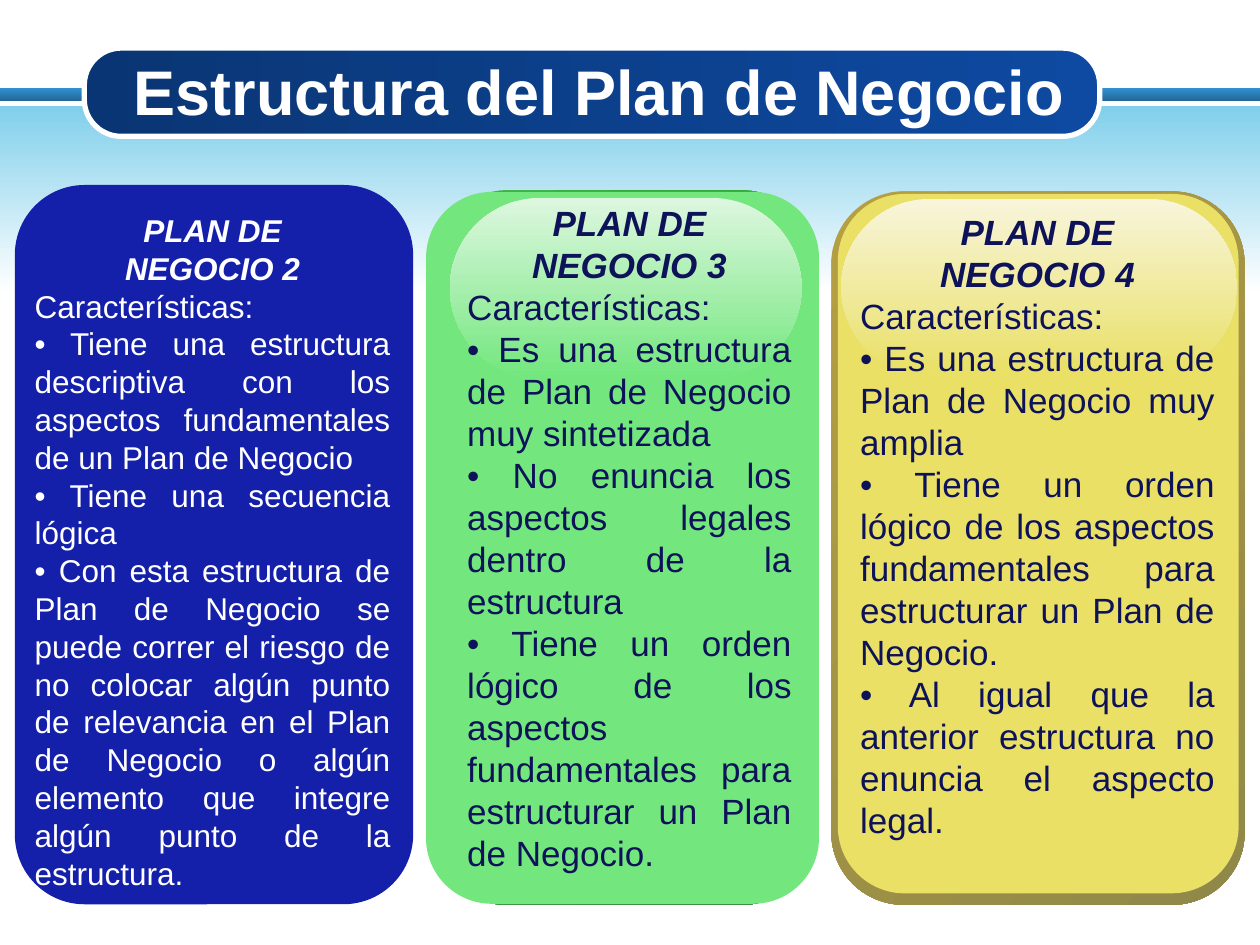
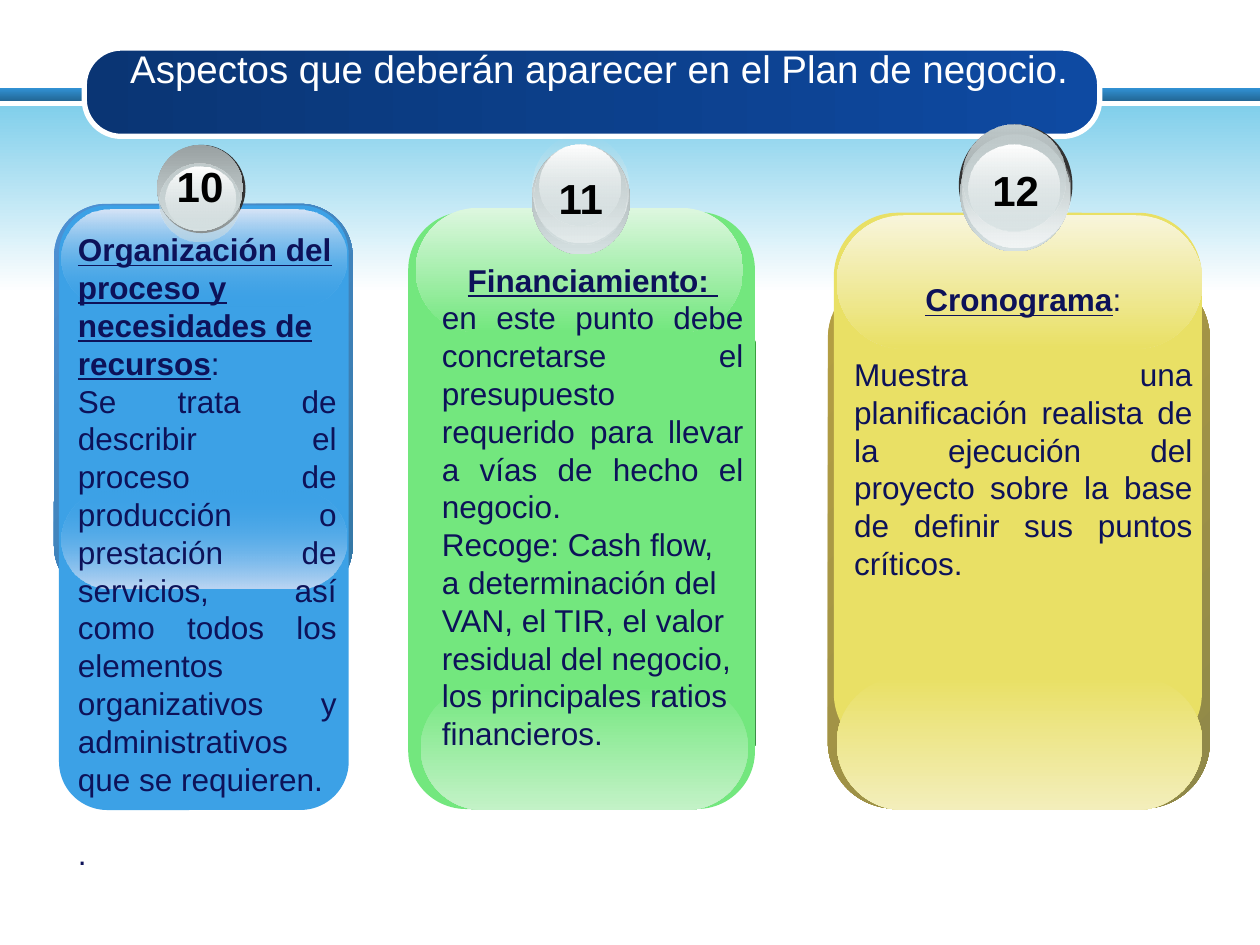
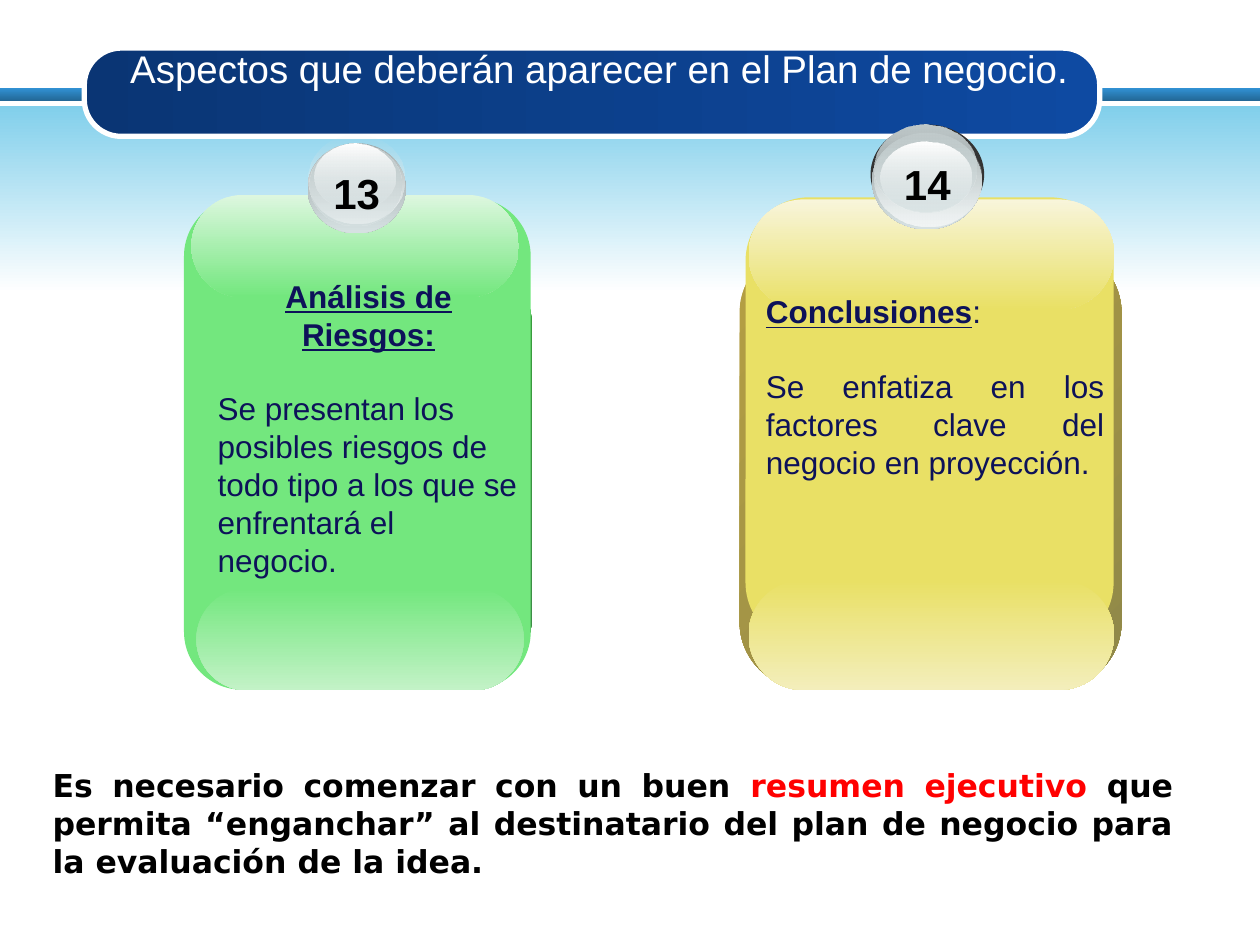
from dataclasses import dataclass

from lxml import etree
from pptx import Presentation
from pptx.dml.color import RGBColor
from pptx.enum.shapes import MSO_SHAPE
from pptx.enum.text import MSO_ANCHOR, PP_ALIGN
from pptx.oxml.ns import qn
from pptx.util import Cm, Pt

RECT, ROUND = MSO_SHAPE.RECTANGLE, MSO_SHAPE.ROUNDED_RECTANGLE
OVAL = MSO_SHAPE.OVAL
LEFT, MID, JUST = PP_ALIGN.LEFT, PP_ALIGN.CENTER, PP_ALIGN.JUSTIFY

COLORS = {
    "white": "FFFFFF", "black": "000000", "navy": "0D1259", "red": "FF0000",
    "royal": "1420AA", "coal": "333333", "band": "3191D3", "band2": "236897",
    "sky": "81CFEB", "title": "0A3574", "title2": "0E4AA2",
    "blue": "3CA1E6", "blue_a": "4E91D4", "blue_b": "3477A4",
    "blue_hi": "D7E5F7", "blue_lo": "BDD6F3",
    "green": "73E77E", "green_a": "34B034", "green_b": "3F8B4A",
    "green_hi": "DDF7DF", "green_lo": "C3F2C7",
    "gold": "E9E065", "gold_a": "B59F43", "gold_b": "8F8849",
    "gold_hi": "F8F5DB", "gold_lo": "F3EEBB",
    "steel": "99A1A2", "silver": "D6E1E2", "mist": "C1CBCC", "pale": "F2F5F5",
}

BLENDS = {
    "bar": ("band", "band2", 90, 100, 100),
    "glow": ("sky", "white", 90, 100, 100),
    "pill": ("title", "title2", 0, 100, 100),
    "blue_top": ("blue_hi", "blue", 90, 100, 0),
    "blue_end": ("blue", "blue_lo", 90, 0, 100),
    "ball": ("steel", "silver", 90, 100, 100),
    "fade": ("silver", "pale", 90, 0, 100),
    "haze": ("mist", "silver", 90, 100, 48),
    "shine": ("white", "silver", 90, 100, 38),
}
for hue in ("blue", "green", "gold"):
    BLENDS[hue + "_back"] = (hue + "_a", hue + "_b", 45, 100, 100)
for hue in ("green", "gold"):
    BLENDS[hue + "_top"] = (hue + "_hi", hue, 90, 100, 100)
    BLENDS[hue + "_end"] = (hue, hue + "_lo", 90, 100, 100)

PANELS = {
    "royal": [("royal", 0.175, 0, 0, 8.03, 14.5),
              ("royal", 0.167, 0.13, 0.03, 7.8, 14.22),
              ("royal", 0.5, 0.18, 0.15, 7.7, 3.61)],
    "green": [("green_back", 0.175, 0.3, 0, 7.39, 14.4),
              ("green", 0.167, 0, 0.03, 7.92, 14.35),
              ("green_top", 0.5, 0.48, 0.15, 7.09, 3.63)],
    "gold": [("gold_back", 0.175, 0, 0, 8.33, 14.38),
             ("gold", 0.167, 0.13, 0.05, 8.08, 14.1),
             ("gold_top", 0.5, 0.2, 0.15, 7.98, 3.56)],
}

CARDS = {
    "blue": (13.41, (2.21, 0.2, 1.47, 1.3), [
        ("blue_back", 0.175, 0, 1.19, 6.02, 7.95),
        ("blue", 0.167, 0.1, 1.22, 5.84, 12.19),
        ("blue_end", 0.5, 0.15, 6.96, 5.74, 1.98),
        ("blue_top", 0.5, 0.15, 1.3, 5.74, 1.96),
        ("coal", None, 2.08, 0, 1.78, 1.78),
        ("ball", None, 2.08, 0, 1.73, 1.73),
        ("haze", None, 2.13, 0.38, 1.6, 1.57),
        ("shine", None, 2.24, 0.43, 1.42, 1.27)]),
    "green": (13.61, (2.77, 0.64, 1.42, 1.27), [
        ("green_back", 0.175, 0.1, 3.15, 6.91, 10.16),
        ("green", 0.167, 0, 1.55, 6.99, 12.04),
        ("green_end", 0.5, 0.25, 11.1, 6.6, 2.51),
        ("green_top", 0.5, 0.15, 1.47, 6.6, 2.51),
        ("ball", None, 2.49, 0.2, 1.98, 2.21),
        ("fade", None, 2.51, 0, 1.93, 2.16),
        ("haze", None, 2.54, 0.2, 1.85, 2.01),
        ("shine", None, 2.64, 0.2, 1.63, 1.63)]),
    "gold": (13.82, (3.05, 0.69, 1.47, 1.27), [
        ("gold_back", 0.175, 0, 2.97, 7.7, 10.82),
        ("gold", 0.173, 0.12, 1.78, 7.42, 10.97),
        ("gold_end", 0.5, 0.18, 11.13, 7.37, 2.69),
        ("gold_top", 0.5, 0.18, 1.83, 7.37, 2.69),
        ("coal", None, 2.64, 0, 2.29, 2.44),
        ("ball", None, 2.67, 0.2, 2.21, 2.36),
        ("fade", None, 2.72, 0.2, 2.16, 2.29),
        ("haze", None, 2.72, 0, 2.06, 2.13),
        ("shine", None, 2.84, 0.41, 1.83, 1.75)]),
}


@dataclass
class Para:
    text: object
    align: object = LEFT
    bold: bool = False
    slant: bool = False
    gap: float = 0


def rgb(name):
    return RGBColor.from_string(COLORS[name])


def paint(shape, name):
    if name not in BLENDS:
        shape.fill.solid()
        shape.fill.fore_color.rgb = rgb(name)
        return
    start, end, angle, *alphas = BLENDS[name]
    shape.fill.gradient()
    shape.fill.gradient_angle = (360 - angle) % 360
    for stop, color in zip(shape.fill.gradient_stops, (start, end)):
        stop.color.rgb = rgb(color)
    nodes = list(shape.element.spPr.iter(qn("a:srgbClr")))
    for node, alpha in zip(nodes, alphas):
        if alpha < 100:
            etree.SubElement(node, qn("a:alpha")).set("val", str(alpha * 1000))


def form(slide, kind, box, fill, adj=None):
    shape = slide.shapes.add_shape(kind, *map(Cm, box))
    shape.shadow.inherit = False
    if adj is not None:
        shape.adjustments[0] = adj
    paint(shape, fill)
    shape.line.fill.background()
    return shape


def write(slide, box, paras, size, color="navy", face="Arial"):
    frame = slide.shapes.add_textbox(*map(Cm, box)).text_frame
    frame.word_wrap = True
    for i, para in enumerate(paras):
        line = frame.paragraphs[0] if i == 0 else frame.add_paragraph()
        line.alignment = para.align
        if para.gap:
            line.space_before = Pt(para.gap)
        font = line.font
        font.name, font.size, font.color.rgb = face, Pt(size), rgb(color)
        font.bold, font.italic = para.bold, para.slant
        parts = para.text if isinstance(para.text, list) else [(para.text, "")]
        for text, role in parts:
            run = line.add_run()
            run.text = text
            if role == "head":
                run.font.bold = run.font.underline = True
            elif role == "hot":
                run.font.color.rgb = rgb("red")
    return frame


def stack(slide, left, top, parts, scale=1):
    for fill, adj, x, y, w, h in parts:
        kind = OVAL if adj is None else ROUND
        form(slide, kind, (left + x, top + y * scale, w, h * scale), fill, adj)


def base(deck, title, size, bold=False, lift=0):
    slide = deck.slides.add_slide(deck.slide_layouts[6])
    form(slide, RECT, (0, 1.78, 25.4, 0.25), "bar")
    form(slide, RECT, (0, 2.13, 25.4, 3.78), "glow")
    pill = form(slide, ROUND, (1.7, 0.97, 20.47, 1.78), "pill", 0.419)
    pill.line.color.rgb = rgb("white")
    pill.line.width = Pt(3)
    frame = write(slide, (2.34, 1.04, 19.48, 1.57),
                  [Para(title, MID, bold)], size, "white")
    frame.vertical_anchor = MSO_ANCHOR.MIDDLE
    if lift:
        frame.margin_top, frame.margin_bottom = 0, Cm(lift)
    return slide


def panel(slide, left, top, look, area, heads, items, size, color="navy"):
    stack(slide, left, top, PANELS[look])
    x, y, w, h = area
    paras = [Para(text, MID, True, True) for text in heads]
    paras.append(Para("Características:", JUST))
    paras += [Para("• " + text, JUST) for text in items]
    write(slide, (left + x, top + y, w, h), paras, size, color)


def card(slide, box, look, num, area, paras):
    left, top, height = box
    full, spot, parts = CARDS[look]
    scale = height / full
    stack(slide, left, top, parts, scale)
    x, y, w, h = spot
    frame = write(slide, (left + x, top + y * scale, w, h * scale),
                  [Para(num, MID, True)], 24, "black")
    frame.margin_left = frame.margin_right = 0
    x, y, w, h = area
    write(slide, (left + x, top + y, w, h), paras, 18)


def plans(deck):
    slide = base(deck, "Estructura del Plan de Negocio", 36, True)
    panel(slide, 0.3, 3.73, "royal", (0.15, 0.4, 7.67, 14.1),
          ["PLAN DE", "NEGOCIO 2"],
          ["Tiene una estructura descriptiva con los aspectos fundamentales "
           "de un Plan de Negocio",
           "Tiene una secuencia lógica",
           "Con esta estructura de Plan de Negocio se puede correr el riesgo "
           "de no colocar algún punto de relevancia en el Plan de Negocio o "
           "algún elemento que integre algún punto de la estructura."],
          18, "white")
    panel(slide, 8.59, 3.84, "green", (0.58, 0.1, 7.04, 14.25),
          ["PLAN DE NEGOCIO 3"],
          ["Es una estructura de Plan de Negocio muy sintetizada",
           "No enuncia los aspectos legales dentro de la estructura",
           "Tiene un orden lógico de los aspectos fundamentales para "
           "estructurar un Plan de Negocio."], 20)
    panel(slide, 16.76, 3.86, "gold", (0.33, 0.25, 7.65, 13.08),
          ["PLAN DE", "NEGOCIO 4"],
          ["Es una estructura de Plan de Negocio muy amplia",
           "Tiene un orden lógico de los aspectos fundamentales para "
           "estructurar un Plan de Negocio.",
           "Al igual que la anterior estructura no enuncia el aspecto legal."],
          20)


def topics(deck):
    return base(deck, "Aspectos que deberán aparecer en el Plan de negocio.",
                22, lift=0.89)


def means(deck):
    slide = topics(deck)
    card(slide, (1.09, 2.92, 13.41), "blue", "10", (0.23, 1.6, 5.72, 13.34), [
        Para([("Organización del proceso y necesidades de recursos", "head"),
              (":", "")]),
        Para("Se trata de describir el proceso de producción o prestación de "
             "servicios, así como todos los elementos organizativos y "
             "administrativos que se requieren.", JUST),
        Para(".", gap=21)])
    card(slide, (8.23, 2.72, 13.61), "green", "11", (0.43, 2.41, 6.58, 12.57), [
        Para([("Financiamiento: ", "head")], MID),
        Para("en este punto debe concretarse el presupuesto requerido para "
             "llevar a vías de hecho el negocio.", JUST),
        Para("Recoge: Cash flow,"),
        Para("a determinación del VAN, el TIR, el valor residual del negocio,"),
        Para("los principales ratios financieros.")])
    card(slide, (16.69, 2.51, 13.82), "gold", "12", (0.28, 3.02, 7.32, 7.44), [
        Para([("Cronograma", "head"), (":", "")], MID),
        Para("Muestra una planificación realista de la ejecución del proyecto "
             "sobre la base de definir sus puntos críticos.", JUST, gap=21)])


def close(deck):
    slide = topics(deck)
    card(slide, (3.71, 2.72, 11.2), "green", "13", (0.43, 2.74, 6.58, 5.7), [
        Para([("Análisis de Riesgos:", "head")], MID),
        Para("Se presentan los posibles riesgos de todo tipo a los que se "
             "enfrentará el negocio.", gap=21)])
    card(slide, (14.91, 2.51, 11.4), "gold", "14", (0.28, 3.26, 7.32, 4.14), [
        Para([("Conclusiones", "head"), (":", "")]),
        Para("Se enfatiza en los factores clave del negocio en proyección.",
             JUST, gap=21)])
    write(slide, (0.81, 15.32, 23.09, 2.57), [
        Para([("Es necesario comenzar con un buen ", ""),
              ("resumen ejecutivo", "hot"),
              (" que permita “enganchar” al destinatario del plan de negocio "
               "para la evaluación de la idea.", "")], JUST, True)],
          18, "black", "DejaVu Sans")


def main():
    deck = Presentation()
    deck.slide_width, deck.slide_height = Cm(25.4), Cm(19.05)
    plans(deck)
    means(deck)
    close(deck)
    deck.save("out.pptx")


if __name__ == "__main__":
    main()
